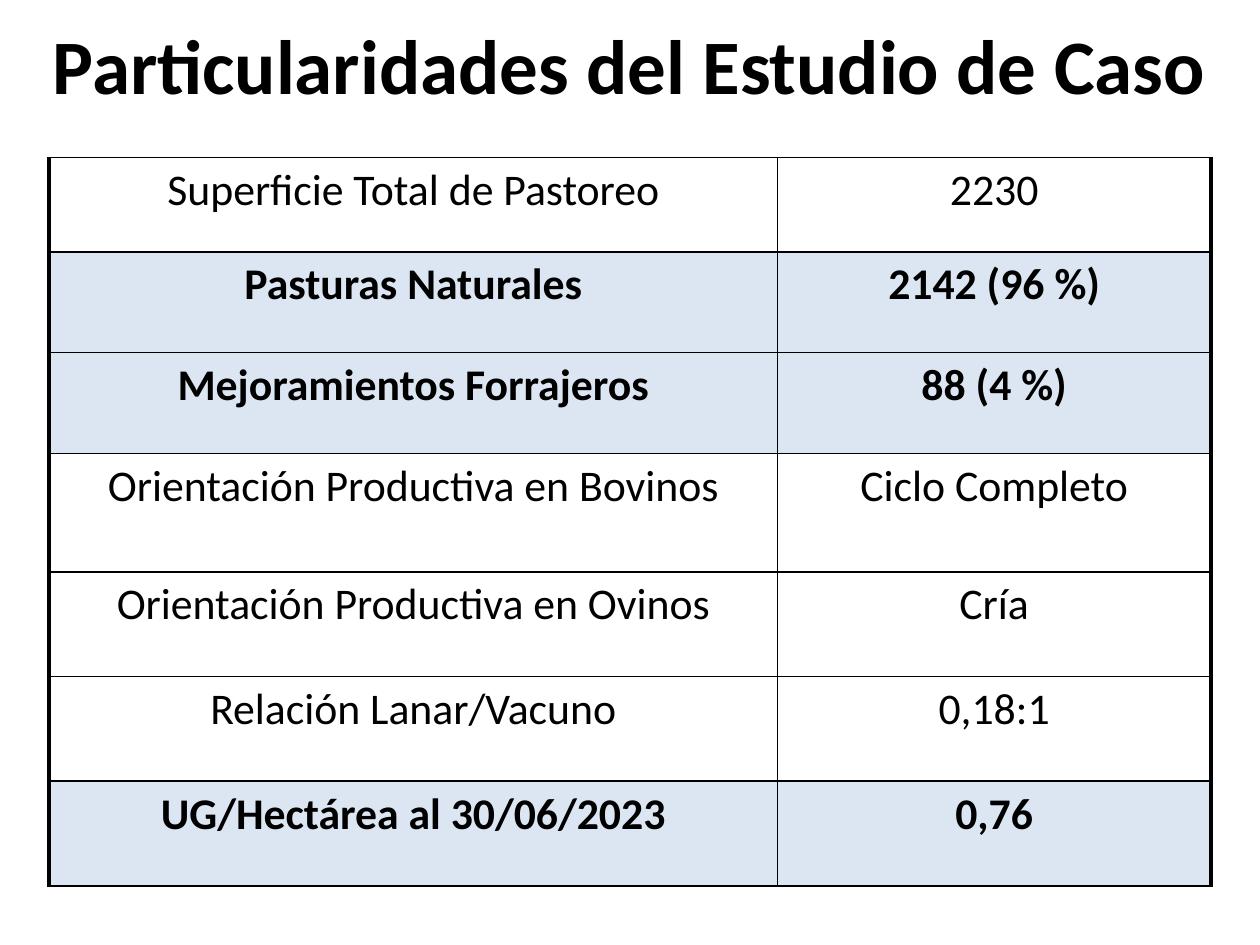
"""Build a slide with a titled two-column table of case study data."""
from dataclasses import dataclass

import pptx
import pptx.dml.color
import pptx.enum.text
import pptx.oxml
import pptx.oxml.ns
import pptx.util
from pptx.util import Cm


@dataclass(frozen=True)
class Theme:
    font: str = "Calibri"
    ink: str = "000000"
    highlight: str = "DCE6F2"
    title_size: float = 44
    cell_size: float = 25
    inner_line: float = 1
    outer_line: float = 2.25


THEME = Theme()
COLUMN_WIDTHS = (14.68, 8.74)
ROWS = (
    ("Superficie Total de Pastoreo", "2230", 1.9, False),
    ("Pasturas Naturales", "2142 (96 %)", 2.03, True),
    ("Mejoramientos Forrajeros", "88 (4 %)", 2.03, True),
    ("Orientación Productiva en Bovinos", "Ciclo Completo", 2.39, False),
    ("Orientación Productiva en Ovinos", "Cría", 2.11, False),
    ("Relación Lanar/Vacuno", "0,18:1", 2.11, False),
    ("UG/Hectárea al 30/06/2023", "0,76", 2.11, True),
)


def add_text(tf, text, size, bold):
    """Write one centred run into a text frame."""
    p = tf.paragraphs[0]
    p.alignment = pptx.enum.text.PP_ALIGN.CENTER
    r = p.add_run()
    r.text = text
    r.font.name = THEME.font
    r.font.size = pptx.util.Pt(size)
    r.font.bold = bold
    r.font.color.rgb = pptx.dml.color.RGBColor.from_string(THEME.ink)


def add_title(s, text):
    """Add the slide title across the full width."""
    sp = s.shapes.add_textbox(0, 0, Cm(25.4), Cm(2.59))
    tf = sp.text_frame
    tf.word_wrap = True
    tf.vertical_anchor = pptx.enum.text.MSO_ANCHOR.MIDDLE
    add_text(tf, text, THEME.title_size, True)


def set_borders(cell, left, right):
    """Draw the four borders of a cell with the given side widths in points."""
    widths = {"L": left, "R": right, "T": THEME.inner_line, "B": THEME.inner_line}
    tc_pr = cell._tc.get_or_add_tcPr()
    for side, width in widths.items():
        tc_pr.append(pptx.oxml.parse_xml(
            f'<a:ln{side} {pptx.oxml.ns.nsdecls("a")} w="{pptx.util.Pt(width)}">'
            f'<a:solidFill><a:srgbClr val="{THEME.ink}"/></a:solidFill>'
            f'</a:ln{side}>'))


def set_fill(cell, highlighted):
    """Shade a highlighted cell and leave any other one clear."""
    if highlighted:
        cell.fill.solid()
        cell.fill.fore_color.rgb = pptx.dml.color.RGBColor.from_string(THEME.highlight)
    else:
        cell.fill.background()


def add_data_table(s):
    """Add the table of case study data."""
    height = sum(row[2] for row in ROWS)
    table = s.shapes.add_table(
        len(ROWS), len(COLUMN_WIDTHS), Cm(0.99), Cm(3.18),
        Cm(sum(COLUMN_WIDTHS)), Cm(height)).table
    table.first_row = False
    table.horz_banding = False
    for column, width in zip(table.columns, COLUMN_WIDTHS):
        column.width = Cm(width)
    sides = ((THEME.outer_line, THEME.inner_line), (THEME.inner_line, THEME.outer_line))
    for row, (label, value, row_height, highlighted) in zip(table.rows, ROWS):
        row.height = Cm(row_height)
        for cell, text, (left, right) in zip(row.cells, (label, value), sides):
            add_text(cell.text_frame, text, THEME.cell_size, highlighted)
            set_borders(cell, left, right)
            set_fill(cell, highlighted)


def main():
    """Create the presentation and save it."""
    prs = pptx.Presentation()
    prs.slide_width, prs.slide_height = Cm(25.4), Cm(19.05)
    s = prs.slides.add_slide(prs.slide_layouts[6])
    add_title(s, "Particularidades del Estudio de Caso")
    add_data_table(s)
    prs.save("out.pptx")


if __name__ == "__main__":
    main()
